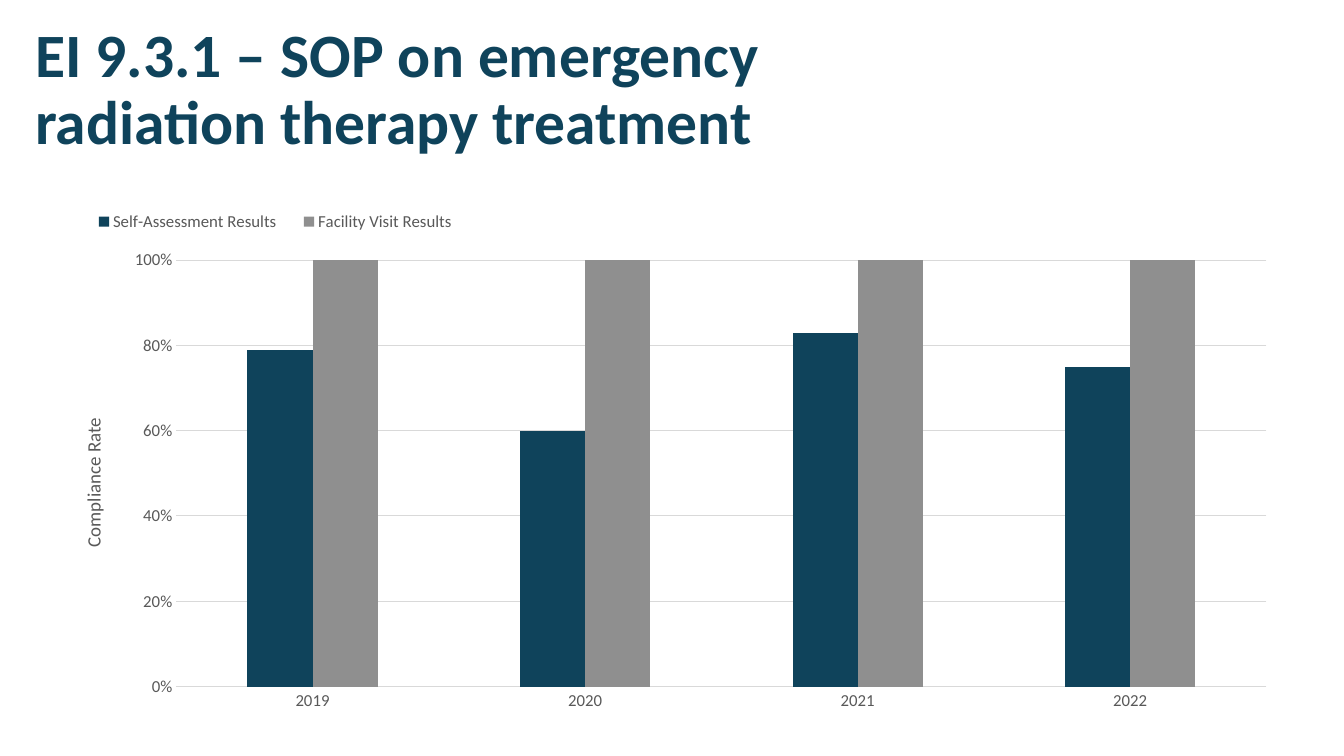
from lxml.etree import SubElement
from pptx import Presentation
from pptx.chart.data import CategoryChartData
from pptx.dml.color import RGBColor
from pptx.enum.chart import XL_CHART_TYPE, XL_LEGEND_POSITION, XL_TICK_MARK
from pptx.enum.text import MSO_ANCHOR
from pptx.oxml.ns import qn
from pptx.util import Cm, Pt

TITLE = "EI 9.3.1 – SOP on emergency radiation therapy treatment"
AXIS_TITLE = "Compliance Rate"
YEARS = ["2019", "2020", "2021", "2022"]
SERIES = [
    ("Self-Assessment Results", [0.79, 0.6, 0.83, 0.75], "0F435B"),
    ("Facility Visit Results", [1, 1, 1, 1], "8F8F8F"),
]
NAVY, GREY, PALE = "0F435B", "595959", "D9D9D9"


def colour(value):
    return RGBColor.from_string(value)


def style(font, size=12, fill=GREY, bold=False):
    font.name = "Calibri"
    font.size = Pt(size)
    font.bold = bold
    font.color.rgb = colour(fill)


def write(frame, text, **look):
    span = frame.paragraphs[0].add_run()
    span.text = text
    style(span.font, **look)


def rule(line):
    line.color.rgb = colour(PALE)
    line.width = Pt(0.75)


def place(element, inner=False, **shares):
    layout = element.get_or_add_layout() if hasattr(element, "get_or_add_layout") else element.find(qn("c:layout"))
    if layout is None:
        layout = SubElement(element, qn("c:layout"))
        element.insert(1, layout)
    manual = SubElement(layout, qn("c:manualLayout"))
    if inner:
        SubElement(manual, qn("c:layoutTarget")).set("val", "inner")
    for side in ("x", "y"):
        SubElement(manual, qn(f"c:{side}Mode")).set("val", "edge")
    for side, share in shares.items():
        SubElement(manual, qn(f"c:{side}")).set("val", str(share))


deck = Presentation()
deck.slide_width, deck.slide_height = Cm(33.87), Cm(19.05)
page = deck.slides.add_slide(deck.slide_layouts[6])

box = page.shapes.add_textbox(Cm(0.64), Cm(0.46), Cm(23.5), Cm(3.68))
box.text_frame.word_wrap = True
box.text_frame.vertical_anchor = MSO_ANCHOR.MIDDLE
write(box.text_frame, TITLE, size=44, fill=NAVY, bold=True)
box.text_frame.paragraphs[0].line_spacing = 0.9

data = CategoryChartData(number_format="0%")
data.categories = YEARS
for name, values, fill in SERIES:
    data.add_series(name, values)
chart = page.shapes.add_chart(
    XL_CHART_TYPE.COLUMN_CLUSTERED, Cm(1.32), Cm(5.13), Cm(31.22), Cm(12.95), data
).chart
style(chart.font)
chart.has_title = False

plot = chart.plots[0]
plot.gap_width, plot.overlap = 219, 0
plot.vary_by_categories = False
for series, (name, values, fill) in zip(plot.series, SERIES):
    series.format.fill.solid()
    series.format.fill.fore_color.rgb = colour(fill)

years, rates = chart.category_axis, chart.value_axis
for axis in (years, rates):
    axis.major_tick_mark = axis.minor_tick_mark = XL_TICK_MARK.NONE
    style(axis.tick_labels.font)
rule(years.format.line)
rates.minimum_scale, rates.maximum_scale, rates.major_unit = 0, 1, 0.2
rates.tick_labels.number_format = "0%"
rates.tick_labels.number_format_is_linked = False
rates.format.line.fill.background()
rates.has_major_gridlines = True
rule(rates.major_gridlines.format.line)
title = rates.axis_title
write(title.text_frame, AXIS_TITLE, size=13.5)
turn = title.text_frame._txBody.find(qn("a:bodyPr"))
turn.set("rot", "-5400000")
turn.set("vert", "horz")

chart.has_legend = True
legend = chart.legend
legend.position = XL_LEGEND_POSITION.TOP
legend.include_in_layout = False
style(legend.font)

area = chart.element.find(f".//{qn('c:plotArea')}")
place(area, inner=True, x=0.1, y=0.11, w=0.88, h=0.83)
place(rates.axis_title.element if hasattr(rates.axis_title, "element") else title._element, x=0.02, y=0.41)
place(legend._element, x=0.02, y=0.01, w=0.32, h=0.05)

deck.save("out.pptx")
